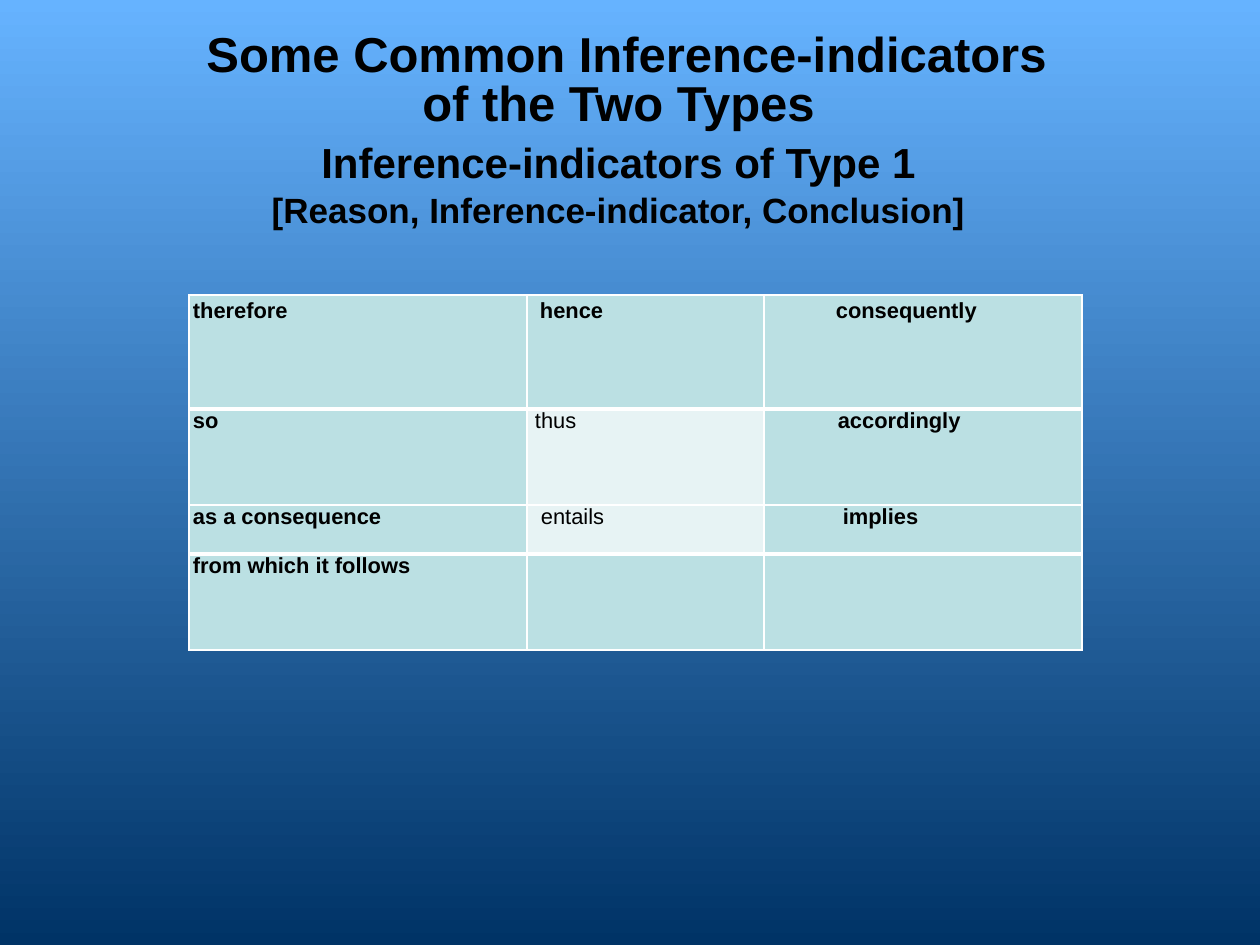
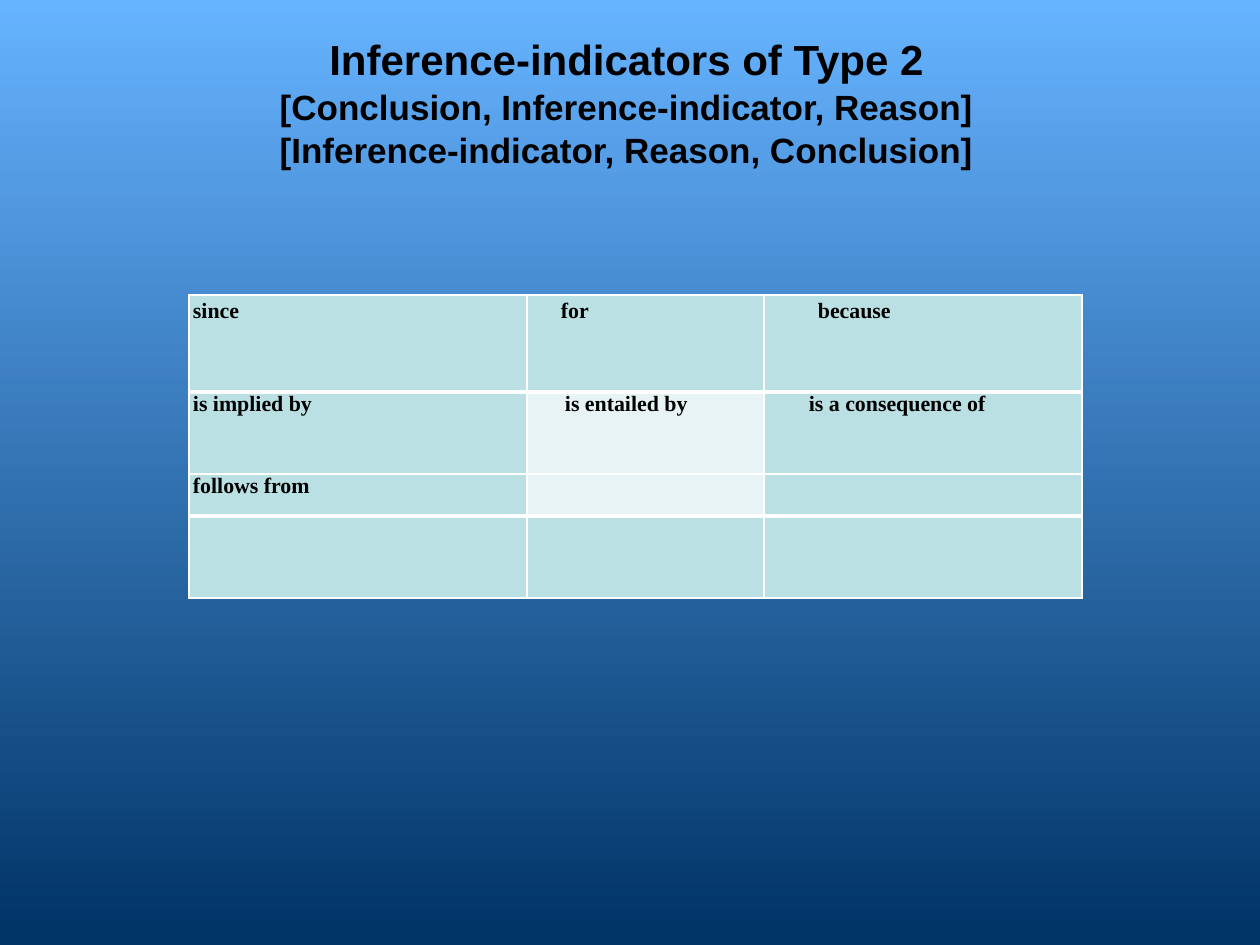
from lxml import etree
from pptx import Presentation
from pptx.dml.color import RGBColor as Rgb
from pptx.enum.text import MSO_ANCHOR as Anchor, MSO_AUTO_SIZE as Auto, PP_ALIGN as Align
from pptx.oxml.ns import qn
from pptx.util import Emu, Pt

HUES = {"sky": "66B3FF", "navy": "003366", "ink": "000000",
        "teal": "BBE0E3", "pale": "E7F3F4", "rule": "FFFFFF"}
COLS = (338, 237, 318)
GAPS = {28: 2, 24: 3, 20: 1}  # space above a title line, by text size
PLAIN = {"thus", "entails"}

TYPE_ONE = {
    "head": [("Some Common Inference-indicators", 28), ("of the Two Types", 28),
             ("Inference-indicators of Type 1", 24),
             ("[Reason, Inference-indicator, Conclusion]", 20)],
    "tall": 262,
    "face": "Arial",
    "rows": (114, 96, 49, 96),
    "words": [[("therefore", 4), ("hence", 13), ("consequently", 72)],
              [("so", 4), ("thus", 8), ("accordingly", 74)],
              [("as a consequence", 4), ("entails", 14), ("implies", 79)],
              [("from which it follows", 4), ("", 0), ("", 0)]],
}
TYPE_TWO = {
    "head": [("Inference-indicators of Type 2", 24),
             ("[Conclusion, Inference-indicator, Reason]", 20),
             ("[Inference-indicator, Reason, Conclusion]", 20)],
    "tall": 204,
    "face": "Times New Roman",
    "rows": (97, 82, 42, 82),
    "words": [[("since", 4), ("for", 34), ("because", 54)],
              [("is implied by", 4), ("is entailed by", 38), ("is a consequence of", 45)],
              [("follows from", 4), ("", 0), ("", 0)],
              [("", 0), ("", 0), ("", 0)]],
}


def px(n):
    return Emu(round(n * 914400 / 126))


def hue(name):
    return Rgb.from_string(HUES[name])


def set_font(para, face, size, bold=True):
    font = para.font
    font.name, font.size, font.bold = face, Pt(size), bold
    font.color.rgb = hue("ink")


def paint_back(master):
    fill = master.background.fill
    fill.gradient()
    fill.gradient_angle = 270
    for stop, name in zip(fill.gradient_stops, ("sky", "navy")):
        stop.color.rgb = hue(name)


def add_head(slide, lines, left, top, width, height):
    title = slide.shapes.title
    title.left, title.top, title.width, title.height = map(px, (left, top, width, height))
    frame = title.text_frame
    frame.auto_size, frame.word_wrap = Auto.NONE, True
    frame.vertical_anchor = Anchor.TOP
    frame.margin_left = frame.margin_right = frame.margin_top = frame.margin_bottom = 0
    frame.text = "\n".join(text for text, _ in lines)
    for i, (para, (_, size)) in enumerate(zip(frame.paragraphs, lines)):
        set_font(para, "Arial", size)
        para.alignment = Align.CENTER
        para.space_before = Pt(GAPS[size])
        if size == 28:
            para.line_spacing = Pt(28)
            if i:
                para.space_before = Pt(0)
                para._p.get_or_add_pPr().set("marR", str(px(16)))


def set_edges(cell, row):
    """Rule all four sides, with heavy lines below rows 0 and 2."""
    props = cell._tc.get_or_add_tcPr()
    wide = {"T": row in (1, 3), "B": row in (0, 2)}
    for side in "LRTB":
        line = etree.SubElement(props, qn(f"a:ln{side}"),
                                w=str(Pt(3 if wide.get(side) else 1)))
        fill = etree.SubElement(line, qn("a:solidFill"))
        etree.SubElement(fill, qn("a:srgbClr"), val=HUES["rule"])


def fill_cell(cell, word, inset, face, row, col):
    set_edges(cell, row)
    cell.fill.solid()
    cell.fill.fore_color.rgb = hue("pale" if col == 1 and row in (1, 2) else "teal")
    cell.margin_left = px(inset)
    cell.margin_right = cell.margin_top = cell.margin_bottom = 0
    cell.text = word
    para = cell.text_frame.paragraphs[0]
    set_font(para, face, 12.5, word not in PLAIN)
    para.line_spacing = Pt(13.8) if row else 1.15
    para.space_before = Pt(0 if row else 3.6)


def add_grid(slide, words, rows, face, left, top):
    table = slide.shapes.add_table(len(rows), len(COLS), px(left), px(top),
                                   px(sum(COLS)), px(sum(rows))).table
    table.first_row = table.horz_banding = False
    for col, width in zip(table.columns, COLS):
        col.width = px(width)
    for r, height in enumerate(rows):
        table.rows[r].height = px(height)
        for c, (word, inset) in enumerate(words[r]):
            fill_cell(table.cell(r, c), word, inset, face, r, c)


def add_page(deck, page):
    slide = deck.slides.add_slide(deck.slide_layouts[5])
    add_head(slide, page["head"], 35, 33, 1183, page["tall"])
    add_grid(slide, page["words"], page["rows"], page["face"], 189, 295)


def main():
    deck = Presentation()
    deck.slide_width, deck.slide_height = px(1260), px(945)
    paint_back(deck.slide_master)
    for page in (TYPE_ONE, TYPE_TWO):
        add_page(deck, page)
    deck.save("out.pptx")


if __name__ == "__main__":
    main()
